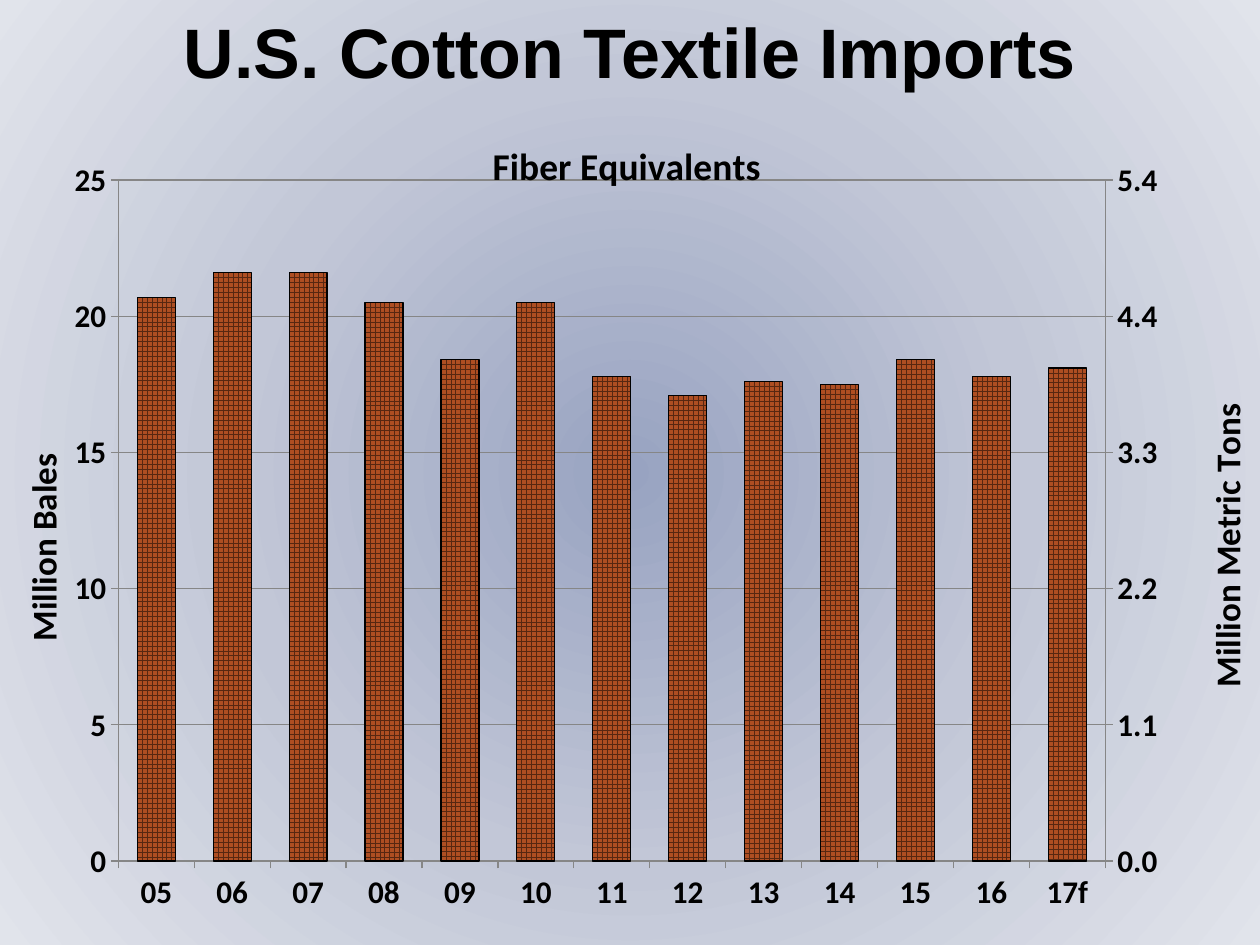
from copy import deepcopy
from pptx import Presentation
from pptx.chart.axis import ValueAxis
from pptx.chart.data import CategoryChartData
from pptx.dml.color import RGBColor
from pptx.enum.chart import XL_CHART_TYPE, XL_TICK_LABEL_POSITION, XL_TICK_MARK
from pptx.enum.dml import MSO_PATTERN
from pptx.enum.text import MSO_ANCHOR, PP_ALIGN
from pptx.oxml import parse_xml
from pptx.oxml.ns import nsdecls, qn
from pptx.util import Pt

HUES = {"text": "000000", "grid": "868686", "weave": "572711", "bar": "AE4E22",
        "inner": "98A3C1", "mid": "C2C7D7", "outer": "E1E4EB"}
BALE = 480 / 2204.62  # metric tons in a 480-pound bale
TOP, STEP = 25, 5


def write(frame, text, size, font="Calibri", turn=None):
    frame.text = text
    para = frame.paragraphs[0]
    para.alignment = PP_ALIGN.CENTER
    face = para.runs[0].font
    face.name, face.size, face.bold = font, Pt(size), True
    face.color.rgb = RGBColor.from_string(HUES["text"])
    if turn is not None:
        body = para.runs[0]._r.getparent().getparent().find(qn("a:bodyPr"))
        body.set("rot", str(turn * 60000))
        body.set("vert", "horz")


def place(host, spot, **parts):
    for old in host.findall(qn("c:layout")):
        host.remove(old)
    marks = "".join(f'<c:{key} val="{val}"/>' for key, val in parts.items())
    host.insert(spot, parse_xml(
        f'<c:layout {nsdecls("c")}><c:manualLayout>{marks}</c:manualLayout></c:layout>'))


deck = Presentation()
deck.slide_width, deck.slide_height = Pt(720), Pt(540)
slide = deck.slides.add_slide(deck.slide_layouts[5])

# Radial background
slide.background.fill.solid()
back = slide.element.find(".//" + qn("p:bgPr"))
stops = "".join(
    f'<a:gs pos="{pos * 1000}"><a:srgbClr val="{HUES[key]}"/></a:gs>'
    for pos, key in ((0, "inner"), (50, "mid"), (100, "outer")))
back.replace(back[0], parse_xml(
    f'<a:gradFill {nsdecls("a")} rotWithShape="1"><a:gsLst>{stops}</a:gsLst>'
    '<a:path path="circle"><a:fillToRect l="50000" t="50000" r="50000" b="50000"/>'
    '</a:path></a:gradFill>'))

# Title
title = slide.shapes.title
title.left, title.top, title.width, title.height = Pt(0), Pt(2), Pt(720), Pt(54)
write(title.text_frame, "U.S. Cotton Textile Imports", 40, font="Arial")
title.text_frame.vertical_anchor = MSO_ANCHOR.MIDDLE

# Chart with bales and tons
data = CategoryChartData()
data.categories = [f"{year:02}" for year in range(5, 17)] + ["17f"]
data.add_series("Million Bales", (20.7, 21.6, 21.6, 20.5, 18.4, 20.5, 17.8,
                                  17.1, 17.6, 17.5, 18.4, 17.8, 18.1))
data.add_series("Million Metric Tons", (4.5, 4.7, 4.7, 4.5, 4, 4.5, 3.9,
                                        3.7, 3.8, 3.8, 4, 3.9, 4))
chart = slide.shapes.add_chart(XL_CHART_TYPE.COLUMN_CLUSTERED, Pt(0), Pt(56),
                               Pt(720), Pt(484), data).chart
chart.has_legend = False
chart.font.name, chart.font.size, chart.font.bold = "Calibri", Pt(18), True
chart.font.color.rgb = RGBColor.from_string(HUES["text"])
chart.has_title = True
write(chart.chart_title.text_frame, "Fiber Equivalents", 21.6)
chart.chart_title.include_in_layout = False
place(chart.chart_title._element, 1, xMode="edge", yMode="edge", x=0.39, y=0.04)

# Bars: woven bales, unseen tons
plot = chart.plots[0]
plot.gap_width, plot.vary_by_categories = 100, False
bales, tons = plot.series
bales.format.fill.patterned()
bales.format.fill.pattern = MSO_PATTERN.LARGE_GRID
bales.format.fill.fore_color.rgb = RGBColor.from_string(HUES["weave"])
bales.format.fill.back_color.rgb = RGBColor.from_string(HUES["bar"])
bales.format.line.color.rgb = RGBColor.from_string(HUES["text"])
bales.format.line.width = Pt(0.75)
tons.format.fill.background()
tons.format.line.fill.background()

# Left and bottom axes
left, base = chart.value_axis, chart.category_axis
left.has_major_gridlines = True
base.tick_label_position = XL_TICK_LABEL_POSITION.LOW
for axis in (left, base):
    axis.major_tick_mark = XL_TICK_MARK.OUTSIDE
    axis.minor_tick_mark = XL_TICK_MARK.NONE
for item in (left, base, left.major_gridlines):
    item.format.line.color.rgb = RGBColor.from_string(HUES["grid"])
    item.format.line.width = Pt(0.75)

# Second bar group on its own pair of axes
area = chart._chartSpace.find(".//" + qn("c:plotArea"))
first = area.find(qn("c:barChart"))
second = deepcopy(first)
first.remove(first.findall(qn("c:ser"))[1])
second.remove(second.find(qn("c:ser")))
first.addnext(second)
cat, val = area.find(qn("c:catAx")), area.find(qn("c:valAx"))
far, hidden = deepcopy(val), deepcopy(cat)
val.addnext(far)
far.addnext(hidden)
for node, name in zip(second.findall(qn("c:axId")), ("5001", "5002")):
    node.set("val", name)
for node, own, other in ((hidden, "5001", "5002"), (far, "5002", "5001")):
    node.find(qn("c:axId")).set("val", own)
    node.find(qn("c:crossAx")).set("val", other)
far.find(qn("c:axPos")).set("val", "r")
far.find(qn("c:crosses")).set("val", "max")
hidden.find(qn("c:delete")).set("val", "1")
right = ValueAxis(far)
right.has_major_gridlines = False

# Scales and titles of both value axes
for axis, rate, form, name, x, y in (
        (left, 1, "0", "Million Bales", 0.01, 0.41),
        (right, BALE, "#,##0.0", "Million Metric Tons", 0.96, 0.35)):
    axis.minimum_scale, axis.maximum_scale = 0, TOP * rate
    axis.major_unit = STEP * rate
    axis.tick_labels.number_format = form
    axis.tick_labels.number_format_is_linked = False
    write(axis.axis_title.text_frame, name, 20, turn=-90)
    place(axis.axis_title._element, 1, xMode="edge", yMode="edge", x=x, y=y)

# Plot frame
place(area, 0, layoutTarget="inner", xMode="edge", yMode="edge",
      x=0.095, y=0.097, w=0.792, h=0.804)

deck.save("out.pptx")
